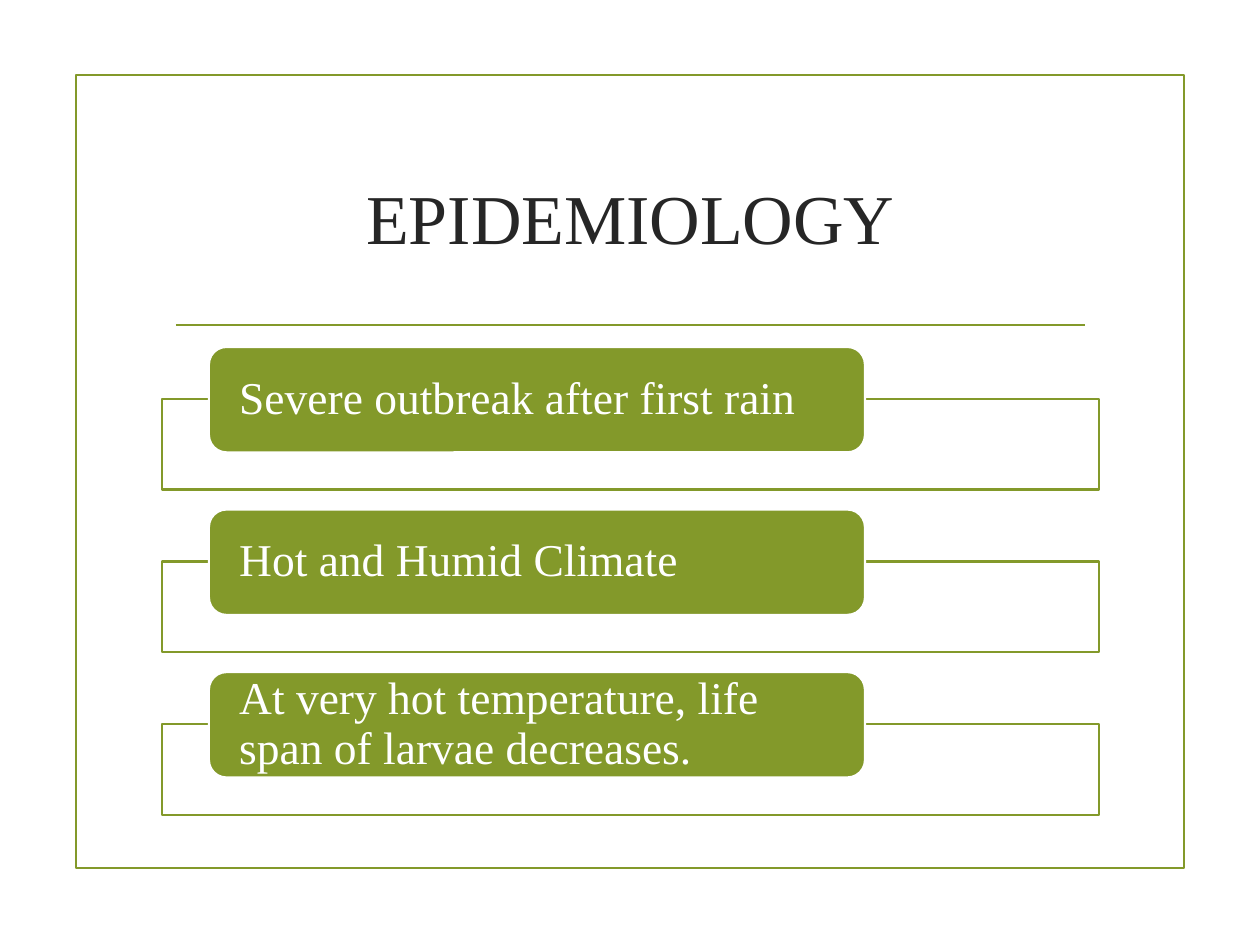
from dataclasses import dataclass

from lxml.etree import SubElement
from pptx import Presentation
from pptx.dml.color import RGBColor
from pptx.enum.shapes import MSO_CONNECTOR, MSO_SHAPE
from pptx.enum.text import MSO_ANCHOR, PP_ALIGN
from pptx.oxml.ns import qn
from pptx.util import Pt


@dataclass(frozen=True)
class Theme:
    font: str = "Times New Roman"
    green: RGBColor = RGBColor(0x83, 0x99, 0x2A)
    white: RGBColor = RGBColor(0xFF, 0xFF, 0xFF)
    dark: RGBColor = RGBColor(0x26, 0x26, 0x26)
    title_size: float = 40
    point_size: float = 26
    line_width: float = 1.25


THEME = Theme()


def write(holder, text, *, size, color, align=PP_ALIGN.LEFT, spacing=1.0, insets=(7.2, 3.6)):
    """Fill a shape with one vertically centred paragraph; insets are (sides, top and bottom)."""
    frame = holder.text_frame
    frame.word_wrap = True
    frame.vertical_anchor = MSO_ANCHOR.MIDDLE
    frame.margin_left = frame.margin_right = Pt(insets[0])
    frame.margin_top = frame.margin_bottom = Pt(insets[1])
    paragraph = frame.paragraphs[0]
    paragraph.alignment = align
    paragraph.line_spacing = spacing
    run = paragraph.add_run()
    run.text = text
    run.font.name = THEME.font
    run.font.size = Pt(size)
    run.font.color.rgb = color


def add_box(preset, left, top, width, height, *, line, fill=None):
    box = slide.shapes.add_shape(preset, Pt(left), Pt(top), Pt(width), Pt(height))
    box.shadow.inherit = False
    box.line.color.rgb = line
    box.line.width = Pt(THEME.line_width)
    if fill is None:
        box.fill.background()
    else:
        box.fill.solid()
        box.fill.fore_color.rgb = fill
    return box


presentation = Presentation()
presentation.slide_width = Pt(720)
presentation.slide_height = Pt(540)
slide = presentation.slides.add_slide(presentation.slide_layouts[6])

# Page frame, title and the rule below it
add_box(MSO_SHAPE.RECTANGLE, 43.5, 42.75, 633, 453.5, line=THEME.green)

rule = slide.shapes.add_connector(MSO_CONNECTOR.STRAIGHT, Pt(100.5), Pt(185.6), Pt(620), Pt(185.6))
rule.line.color.rgb = THEME.green
rule.line.width = Pt(THEME.line_width)
SubElement(rule._element.spPr, qn("a:effectLst"))

title = slide.shapes.add_textbox(Pt(92.5), Pt(72), Pt(535.5), Pt(103))
write(title, "EPIDEMIOLOGY", size=THEME.title_size, color=THEME.dark, align=PP_ALIGN.CENTER)

# One outlined panel per point, with its label overlapping the top edge
POINTS = [
    "Severe outbreak after first rain",
    "Hot and Humid Climate",
    "At very hot temperature, life span of larvae decreases.",
]
FIRST_TOP, PITCH = 198.25, 92.9
PANEL_DROP = 29.75

for index, point in enumerate(POINTS):
    top = FIRST_TOP + index * PITCH
    panel = add_box(MSO_SHAPE.RECTANGLE, 92.6, top + PANEL_DROP, 535.5, 51.75,
                    line=THEME.green, fill=THEME.white)
    panel_color = panel._element.spPr.find(qn("a:solidFill"))[0]
    SubElement(panel_color, qn("a:alpha"), val="90000")

    label = add_box(MSO_SHAPE.ROUNDED_RECTANGLE, 119.4, top, 374.9, 60.25,
                    line=THEME.white, fill=THEME.green)
    write(label, point, size=THEME.point_size, color=THEME.white, spacing=0.9, insets=(14.4, 0))

presentation.save("out.pptx")
